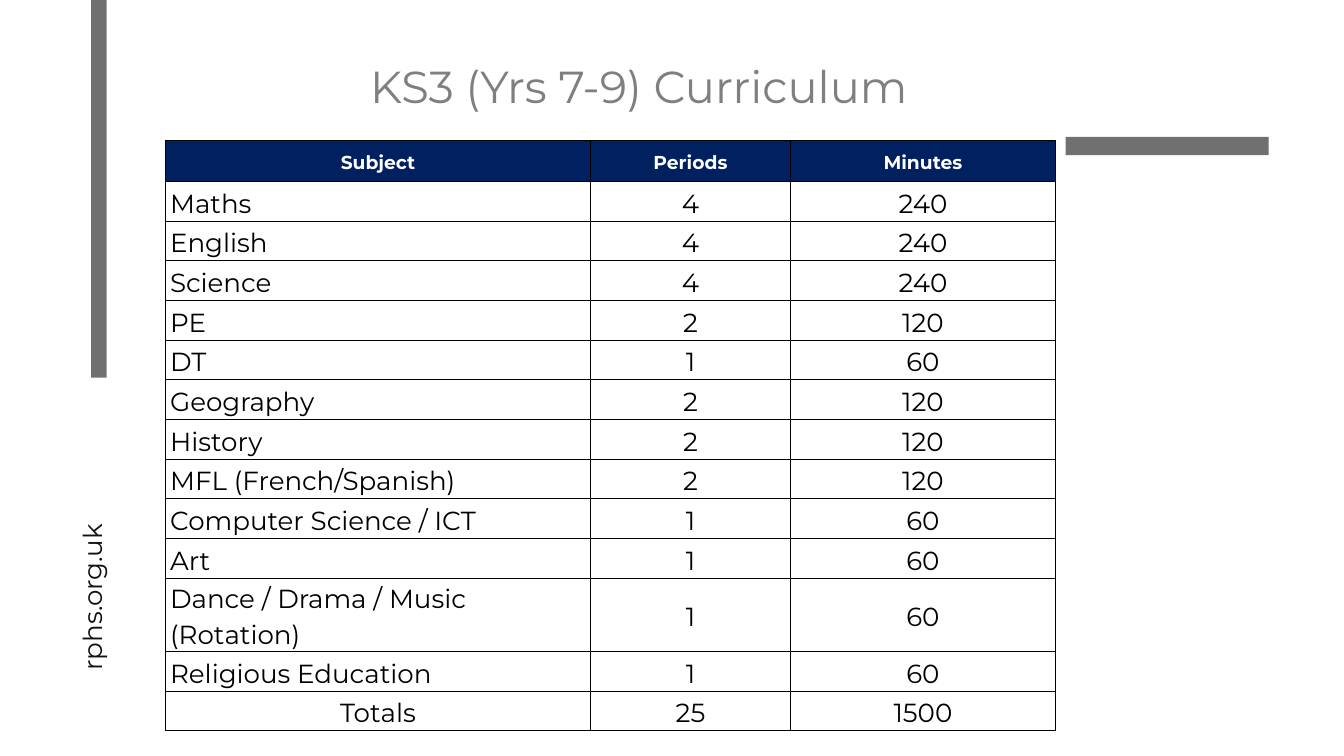
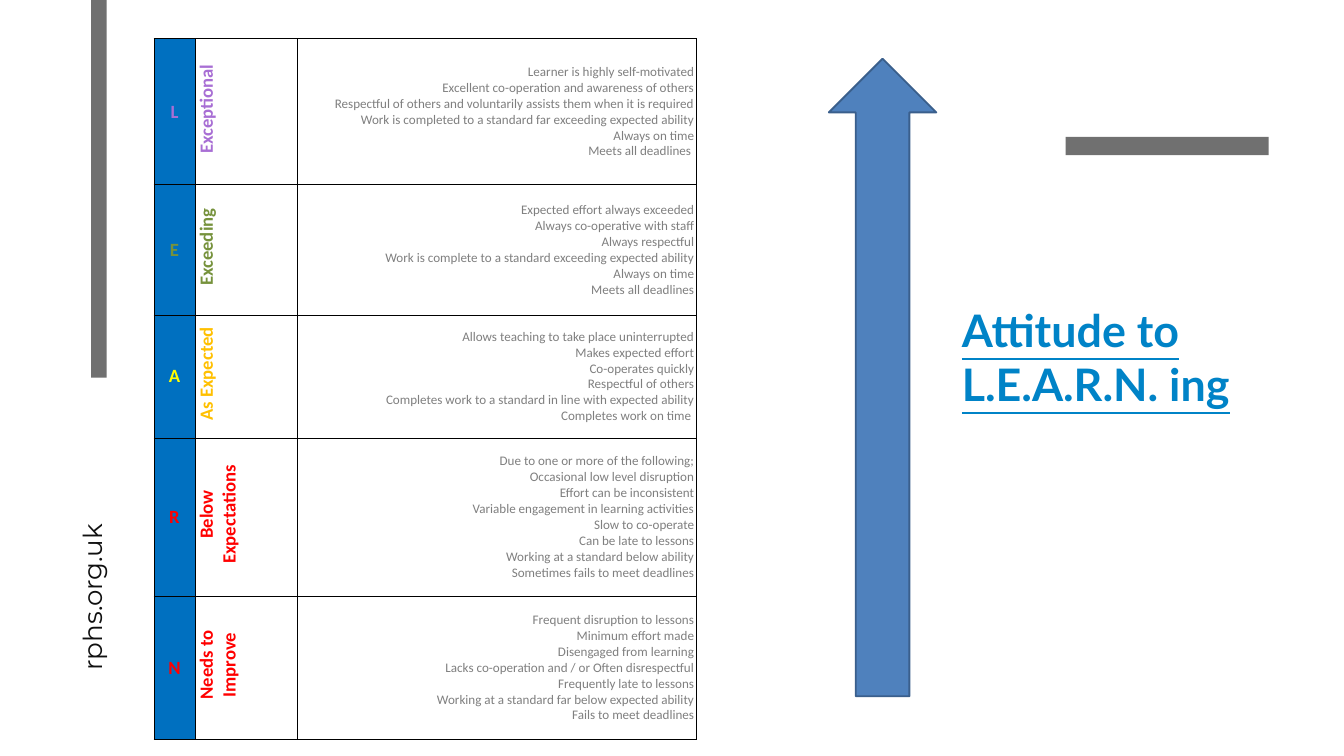
from typing import NamedTuple

from lxml.etree import SubElement
from pptx import Presentation
from pptx.dml.color import RGBColor
from pptx.enum.shapes import MSO_SHAPE as Shape
from pptx.enum.text import MSO_ANCHOR as Anchor, MSO_AUTO_SIZE as AutoSize, PP_ALIGN as Align
from pptx.oxml import parse_xml
from pptx.oxml.ns import nsdecls, qn
from pptx.util import Cm, Pt

COLOURS = {
    "bar": "707070", "address": "101010", "grey": "7F7F7F", "black": "000000",
    "white": "FFFFFF", "navy": "002060", "blue": "0070C0", "heading": "0083C7",
    "arrow": "4F81BD", "arrow edge": "3A5F8C", "purple": "A86ED4", "green": "76923C",
    "yellow": "FFFF00", "amber": "FFC000", "red": "FF0000",
}

SUBJECTS = [
    ("Maths", 4, 240), ("English", 4, 240), ("Science", 4, 240), ("PE", 2, 120),
    ("DT", 1, 60), ("Geography", 2, 120), ("History", 2, 120),
    ("MFL (French/Spanish)", 2, 120), ("Computer Science / ICT", 1, 60), ("Art", 1, 60),
    ("Dance / Drama / Music (Rotation)", 1, 60), ("Religious Education", 1, 60),
]

ATTITUDES = [
    ("L", "purple", "Exceptional", "purple", [
        "Learner is highly self-motivated",
        "Excellent co-operation and awareness of others",
        "Respectful of others and voluntarily assists them when it is required",
        "Work is completed to a standard far exceeding expected ability",
        "Always on time",
        "Meets all deadlines ",
    ]),
    ("E", "green", "Exceeding", "green", [
        "Expected effort always exceeded",
        "Always co-operative with staff",
        "Always respectful",
        "Work is complete to a standard exceeding expected ability",
        "Always on time",
        "Meets all deadlines",
    ]),
    ("A", "yellow", "As Expected", "amber", [
        "Allows teaching to take place uninterrupted",
        "Makes expected effort",
        "Co-operates quickly",
        "Respectful of others",
        "Completes work to a standard in line with expected ability",
        "Completes work on time ",
    ]),
    ("R", "red", "Below Expectations", "red", [
        "Due to one or more of the following;",
        "Occasional low level disruption",
        "Effort can be inconsistent",
        "Variable engagement in learning activities",
        "Slow to co-operate",
        "Can be late to lessons",
        "Working at a standard below ability",
        "Sometimes fails to meet deadlines",
    ]),
    ("N", "red", "Needs to Improve", "red", [
        "Frequent disruption to lessons",
        "Minimum effort made",
        "Disengaged from learning",
        "Lacks co-operation and / or Often disrespectful",
        "Frequently late to lessons",
        "Working at a standard far below expected ability",
        "Fails to meet deadlines",
    ]),
]


class Box(NamedTuple):
    """A region in centimetres."""
    left: float
    top: float
    width: float
    height: float

    def within(self, left, top, width, height):
        """Return a region offset from this one."""
        return Box(self.left + left, self.top + top, width, height)

    def lengths(self):
        """Return the four measures as slide lengths."""
        return [Cm(measure) for measure in self]


def rgb(colour):
    """Look up a named colour."""
    return RGBColor.from_string(COLOURS[colour])


def style_text(frame, font, size, colour, bold=False, underline=False,
               align=Align.LEFT, spacing=None):
    """Format every paragraph and run of a text frame."""
    for paragraph in frame.paragraphs:
        paragraph.alignment = align
        if spacing:
            paragraph.line_spacing = spacing
        for run in paragraph.runs:
            run.font.name, run.font.size = font, Pt(size)
            run.font.bold, run.font.underline = bold, underline
            run.font.color.rgb = rgb(colour)


def fill_shape(shape, colour, edge=None):
    """Give a shape a flat fill and an optional outline."""
    shape.shadow.inherit = False
    shape.fill.solid()
    shape.fill.fore_color.rgb = rgb(colour)
    if edge:
        shape.line.color.rgb = rgb(edge)
        shape.line.width = Pt(2)
    else:
        shape.line.fill.background()


def draw_frame(slide, box):
    """Draw the grey bars and web address and move them to the layout."""
    shapes = slide.shapes
    upright = shapes.add_shape(Shape.RECTANGLE, *box.within(3.45, 0, 0.58, 14.28).lengths())
    accent = shapes.add_shape(Shape.RECTANGLE, *box.within(40.28, 5.18, 7.67, 0.69).lengths())
    for bar in (upright, accent):
        fill_shape(bar, "bar")
    address = shapes.add_textbox(*box.within(-2.16, 19.13, 11.05, 1.37).lengths())
    address.rotation = 270
    frame = address.text_frame
    frame.word_wrap = True
    frame.margin_left = frame.margin_right = frame.margin_top = frame.margin_bottom = 0
    frame.text = "rphs.org.uk"
    style_text(frame, "Montserrat", 28, "address", spacing=Pt(39.2))
    for part in (upright, accent, address):
        slide.slide_layout.shapes.element.append(part.element)


def place_title(slide, box, text, anchor, **style):
    """Move the title placeholder into the box and format it."""
    title = slide.shapes.title
    title.left, title.top, title.width, title.height = box.lengths()
    frame = title.text_frame
    frame.text = text
    frame.word_wrap, frame.auto_size = True, AutoSize.NONE
    frame.vertical_anchor = anchor
    style_text(frame, size=48, **style)


def add_grid(slide, box, columns, rows):
    """Add a plain table whose columns and rows share the box by weight."""
    table = slide.shapes.add_table(len(rows), len(columns), *box.lengths()).table
    table.first_row = table.horz_banding = False
    for column, weight in zip(table.columns, columns):
        column.width = Cm(box.width * weight / sum(columns))
    for row, weight in zip(table.rows, rows):
        row.height = Cm(box.height * weight / sum(rows))
    return table


def write_cell(cell, text, margin, fill, **style):
    """Write a cell with its fill, margins and black border."""
    cell.text_frame.text = text
    cell.vertical_anchor = Anchor.MIDDLE
    cell.margin_left = cell.margin_right = Cm(margin)
    cell.margin_top = cell.margin_bottom = 0
    if fill:
        cell.fill.solid()
        cell.fill.fore_color.rgb = rgb(fill)
    else:
        cell.fill.background()
    style_text(cell.text_frame, **style)
    properties = cell._tc.get_or_add_tcPr()
    for position, side in enumerate("LRTB"):
        edge = parse_xml(f'<a:ln{side} {nsdecls("a")} w="{int(Pt(1))}"/>')
        SubElement(SubElement(edge, qn("a:solidFill")), qn("a:srgbClr"), val=COLOURS["black"])
        properties.insert(position, edge)


def draw_curriculum(slide, box):
    """Draw the table of subjects, with totals worked out."""
    _, periods, minutes = zip(*SUBJECTS)
    lines = [("Subject", "Periods", "Minutes"), *SUBJECTS, ("Totals", sum(periods), sum(minutes))]
    table = add_grid(slide, box, [16.08, 7.54, 10.03], [1.55] + [1.5] * (len(lines) - 1))
    heading = {"fill": "navy", "size": 20, "colour": "white", "bold": True}
    entry = {"fill": None, "size": 28, "colour": "black"}
    for row, line in enumerate(lines):
        for column, value in enumerate(line):
            is_subject = column == 0 and line in SUBJECTS
            write_cell(table.cell(row, column), str(value), 0.18, font="Montserrat",
                       align=Align.LEFT if is_subject else Align.CENTER, spacing=1.15,
                       **(entry if row else heading))


def draw_attitudes(slide, box):
    """Draw the table of letters, grades and what each grade means."""
    table = add_grid(slide, box, [1.55, 3.86, 15.11], [5.51, 4.93, 4.65, 5.97, 4.45])
    label = {"font": "Calibri", "size": 20, "bold": True, "align": Align.CENTER}
    for row, (letter, letter_colour, grade, grade_colour, meaning) in enumerate(ATTITUDES):
        letter_cell, grade_cell, meaning_cell = (table.cell(row, column) for column in range(3))
        write_cell(letter_cell, letter, 0.1, "blue", colour=letter_colour, **label)
        write_cell(grade_cell, grade, 0.1, "white", colour=grade_colour, **label)
        grade_cell._tc.get_or_add_tcPr().set("vert", "vert270")
        grade_cell.text_frame.paragraphs[0]._p.get_or_add_pPr().set("marL", str(int(Cm(0.2))))
        write_cell(meaning_cell, "\n".join(meaning), 0.1, "white", font="Calibri",
                   size=14, colour="grey", align=Align.RIGHT)


def draw_rising_arrow(slide, box):
    """Draw the arrow that points up to the best grade."""
    arrow = slide.shapes.add_shape(Shape.RIGHT_ARROW, *box.lengths())
    arrow.rotation = 270
    fill_shape(arrow, "arrow", "arrow edge")


def build_curriculum_slide(slide, box):
    """Build the slide on the Key Stage 3 curriculum."""
    place_title(slide, box.within(13.74, 2.11, 22.28, 2.31), "KS3 (Yrs 7-9) Curriculum",
                Anchor.TOP, font="Montserrat", colour="grey")
    draw_curriculum(slide, box.within(6.25, 5.31, 33.65, 21.05))


def build_attitude_slide(slide, box):
    """Build the slide on attitude to learning."""
    draw_attitudes(slide, box.within(5.82, 1.47, 20.52, 25.51))
    draw_rising_arrow(slide, box.within(21.31, 12.24, 24.1, 4.06))
    place_title(slide, box.within(36.1, 8.41, 12.5, 10.16), "Attitude to\vL.E.A.R.N. ing",
                Anchor.MIDDLE, font="Lato", colour="heading", bold=True, underline=True)


def main():
    """Build and save the presentation."""
    deck = Presentation()
    page = Box(0, 0, 50.8, 28.58)
    deck.slide_width, deck.slide_height = Cm(page.width), Cm(page.height)
    layout = deck.slide_layouts[5]
    curriculum, attitude = (deck.slides.add_slide(layout) for _ in range(2))
    draw_frame(curriculum, page)
    build_curriculum_slide(curriculum, page)
    build_attitude_slide(attitude, page)
    deck.save("out.pptx")


if __name__ == "__main__":
    main()
